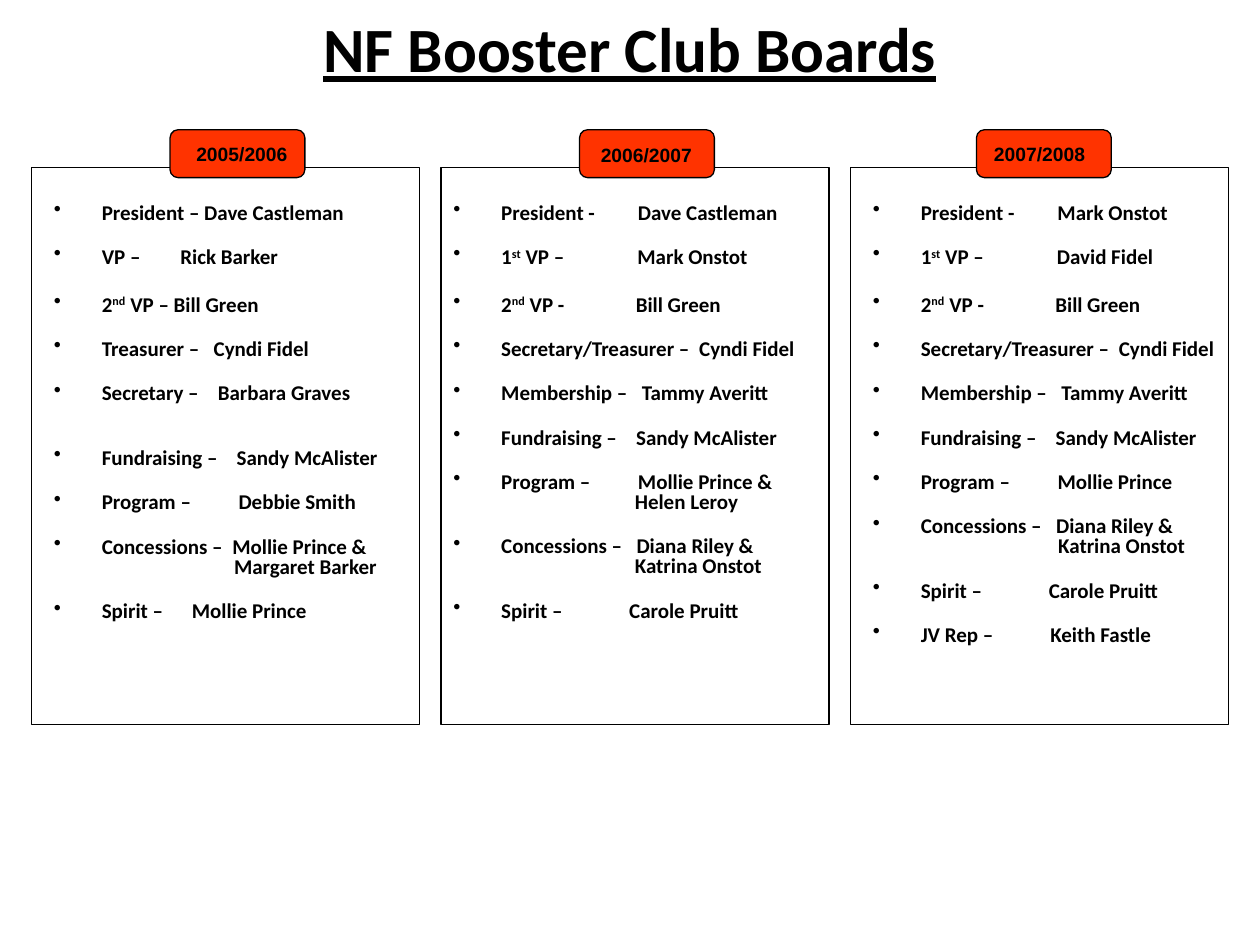
import pptx
import pptx.dml.color
import pptx.enum.shapes
import pptx.enum.text
import pptx.oxml
import pptx.oxml.ns
import pptx.util

Inches = pptx.util.Inches
Pt = pptx.util.Pt
SHAPES = pptx.enum.shapes.MSO_SHAPE
ALIGN = pptx.enum.text.PP_ALIGN
ANCHOR = pptx.enum.text.MSO_ANCHOR

BLACK = "000000"
BADGE_RED = "FF3300"
ENTRY_SPACE = 13.8
HANGING = 0.38

BOARDS = [
    {
        "year": "2005/2006", "panel": (0.25, 3.08), "badge": 1.35,
        "label": (1.46, 1.08), "list": 0.33, "second_line": 1.43,
        "extra_space": {"2^nd^ VP –": 2, "Fundraising –": 11.7},
        "members": [
            ("President –", 0, "Dave Castleman"),
            ("VP –", 20, "Rick Barker"),
            ("2^nd^ VP –", 0, "Bill Green"),
            ("Treasurer –", 5.4, "Cyndi Fidel"),
            ("Secretary –", 8.1, "Barbara Graves"),
            ("Fundraising –", 8.1, "Sandy McAlister"),
            ("Program –", 24.4, "Debbie Smith"),
            ("Concessions –", 2.7, "Mollie Prince &", "Margaret Barker"),
            ("Spirit –", 13.6, "Mollie Prince"),
        ],
    },
    {
        "year": "2006/2007", "panel": (3.5, 3.08), "badge": 4.6,
        "label": (4.67, 1.09), "list": 3.5, "second_line": 1.44,
        "extra_space": {"2^nd^ VP -": 2},
        "members": [
            ("President -", 21.7, "Dave Castleman"),
            ("1^st^ VP –", 39, "Mark Onstot"),
            ("2^nd^ VP -", 38, "Bill Green"),
            ("Secretary/Treasurer –", 2.7, "Cyndi Fidel"),
            ("Membership –", 5.4, "Tammy Averitt"),
            ("Fundraising –", 8.1, "Sandy McAlister"),
            ("Program –", 24.4, "Mollie Prince &", "Helen Leroy"),
            ("Concessions –", 5.4, "Diana Riley &", "Katrina Onstot"),
            ("Spirit –", 35.3, "Carole Pruitt"),
        ],
    },
    {
        "year": "2007/2008", "panel": (6.75, 3), "badge": 7.75,
        "label": (7.79, 1.08), "list": 6.83, "second_line": 1.47,
        "extra_space": {"2^nd^ VP -": 2},
        "members": [
            ("President -", 21.7, "Mark Onstot"),
            ("1^st^ VP –", 39, "David Fidel"),
            ("2^nd^ VP -", 38, "Bill Green"),
            ("Secretary/Treasurer –", 2.7, "Cyndi Fidel"),
            ("Membership –", 5.4, "Tammy Averitt"),
            ("Fundraising –", 8.1, "Sandy McAlister"),
            ("Program –", 24.4, "Mollie Prince"),
            ("Concessions –", 5.4, "Diana Riley &", "Katrina Onstot"),
            ("Spirit –", 35.3, "Carole Pruitt"),
            ("JV Rep –", 29.8, "Keith Fastle"),
        ],
    },
]


def color(value):
    return pptx.dml.color.RGBColor.from_string(value)


def add_text(paragraph, text, size=12, font="Calibri", underline=False,
             baseline=0, tracking=0):
    run = paragraph.add_run()
    run.text = text
    run.font.size = Pt(size)
    run.font.name = font
    run.font.bold = True
    run.font.underline = underline or None
    run.font.color.rgb = color(BLACK)
    properties = run.font._element
    if baseline:
        properties.set("baseline", str(baseline * 1000))
    if tracking:
        properties.set("spc", str(round(tracking * 100)))


def add_frame(slide, left, top, width, height, anchor=ANCHOR.TOP):
    box = slide.shapes.add_textbox(Inches(left), Inches(top), Inches(width), Inches(height))
    box.text_frame.word_wrap = True
    box.text_frame.vertical_anchor = anchor
    return box.text_frame


def add_block(slide, kind, left, top, width, height, fill=None):
    block = slide.shapes.add_shape(
        kind, Inches(left), Inches(top), Inches(width), Inches(height))
    block.shadow.inherit = False
    if fill:
        block.fill.solid()
        block.fill.fore_color.rgb = color(fill)
    else:
        block.fill.background()
    block.line.color.rgb = color(BLACK)
    block.line.width = Pt(0.75)


def indent(paragraph, margin, bullet=False):
    properties = paragraph._p.get_or_add_pPr()
    properties.set("marL", str(Inches(margin)))
    properties.set("indent", str(-Inches(HANGING) if bullet else 0))
    if bullet:
        mark = pptx.oxml.parse_xml(
            f'<a:buChar {pptx.oxml.ns.nsdecls("a")} char="•"/>')
        properties.append(mark)


def add_members(slide, board):
    frame = add_frame(slide, board["list"], 1.57, 3.1, 4.1)
    for number, (role, gap, name, *partners) in enumerate(board["members"]):
        entry = frame.add_paragraph() if number else frame.paragraphs[0]
        entry.line_spacing = 0.8
        extra = board["extra_space"].get(role, 0)
        entry.space_before = Pt(ENTRY_SPACE + extra if number else 0)
        indent(entry, HANGING, bullet=True)
        for position, part in enumerate(role.split("^")):
            if part:
                add_text(entry, part, baseline=30 * (position % 2))
        add_text(entry, " ", tracking=gap)
        add_text(entry, name)
        for partner in partners:
            second_line = frame.add_paragraph()
            second_line.line_spacing = 0.8
            second_line.space_before = Pt(0)
            indent(second_line, board["second_line"])
            add_text(second_line, partner)


def add_board(slide, board):
    left, width = board["panel"]
    add_block(slide, SHAPES.RECTANGLE, left, 1.33, width, 4.42)
    add_block(slide, SHAPES.ROUNDED_RECTANGLE, board["badge"], 1.03, 1.07, 0.38, BADGE_RED)
    label = add_frame(slide, *board["label"], 0.96, 0.29)
    add_text(label.paragraphs[0], board["year"], size=11, font="Arial")
    add_members(slide, board)


def add_title(slide, text):
    title = add_frame(slide, 0.5, -0.25, 9, 1.25, ANCHOR.MIDDLE).paragraphs[0]
    title.alignment = ALIGN.CENTER
    add_text(title, text, size=36, underline=True)


def main():
    presentation = pptx.Presentation()
    presentation.slide_width = Inches(10)
    presentation.slide_height = Inches(7.5)
    slide = presentation.slides.add_slide(presentation.slide_layouts[6])
    add_title(slide, "NF Booster Club Boards")
    for board in BOARDS:
        add_board(slide, board)
    presentation.save("out.pptx")


if __name__ == "__main__":
    main()
